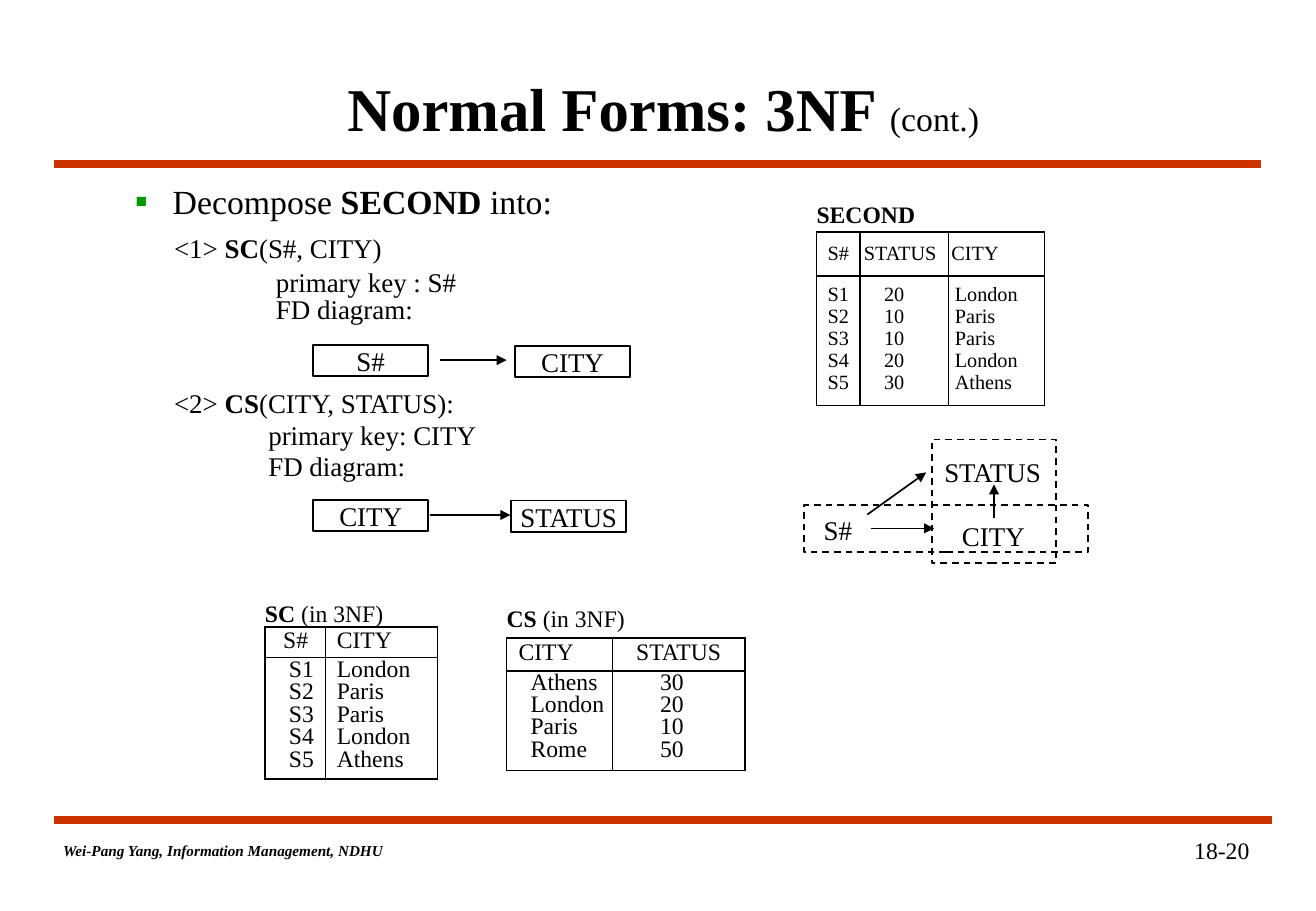
import lxml.etree
import pptx
import pptx.dml.color
import pptx.enum.dml
import pptx.enum.shapes
import pptx.enum.text
import pptx.oxml.ns
import pptx.util

Cm = pptx.util.Cm
Pt = pptx.util.Pt
ANCHOR = pptx.enum.text.MSO_ANCHOR
ALIGN = pptx.enum.text.PP_ALIGN
FONT = "Times New Roman"
BLACK, WHITE, RED, GREEN = "000000", "FFFFFF", "CC3300", "009900"


def color(value):
    return pptx.dml.color.RGBColor.from_string(value)


def add_child(parent, tag, **attributes):
    return lxml.etree.SubElement(parent, pptx.oxml.ns.qn(tag), attributes)


def add_run(paragraph, text, size, bold=False, italic=False):
    run = paragraph.add_run()
    run.text = text
    run.font.name = FONT
    run.font.size = Pt(size)
    run.font.bold = bold
    run.font.italic = italic
    run.font.color.rgb = color(BLACK)


def clear_margins(frame):
    frame.margin_left = frame.margin_right = 0
    frame.margin_top = frame.margin_bottom = 0


def add_text(slide, left, top, width, height, lines):
    """Each line is a list of (text, size, bold) runs; returns the paragraphs."""
    box = slide.shapes.add_textbox(Cm(left), Cm(top), Cm(width), Cm(height))
    frame = box.text_frame
    clear_margins(frame)
    frame.word_wrap = True
    for index, runs in enumerate(lines):
        paragraph = frame.add_paragraph() if index else frame.paragraphs[0]
        for run in runs:
            add_run(paragraph, *run)
    return frame.paragraphs


def add_line(slide, start, end, line_color=BLACK, width=1, arrow=False):
    connector = slide.shapes.add_connector(
        pptx.enum.shapes.MSO_CONNECTOR.STRAIGHT, *(Cm(value) for value in start + end))
    connector.line.color.rgb = color(line_color)
    connector.line.width = Pt(width)
    if arrow:
        add_child(connector.line._get_or_add_ln(), "a:tailEnd", type="triangle")
    add_child(connector._element.spPr, "a:effectLst")


def add_rectangle(slide, left, top, width, height, text="", dashed=False):
    shape = slide.shapes.add_shape(
        pptx.enum.shapes.MSO_SHAPE.RECTANGLE, Cm(left), Cm(top), Cm(width), Cm(height))
    shape.shadow.inherit = False
    shape.line.color.rgb = color(BLACK)
    shape.line.width = Pt(1)
    if dashed:
        shape.fill.background()
        shape.line.dash_style = pptx.enum.dml.MSO_LINE.DASH
    else:
        shape.fill.solid()
        shape.fill.fore_color.rgb = color(WHITE)
    if text:
        frame = shape.text_frame
        clear_margins(frame)
        frame.word_wrap = False
        frame.vertical_anchor = ANCHOR.MIDDLE
        frame.paragraphs[0].alignment = ALIGN.CENTER
        add_run(frame.paragraphs[0], text, 16)


def set_borders(cell, top, bottom):
    properties = cell._tc.get_or_add_tcPr()
    for side, visible in (("L", True), ("R", True), ("T", top), ("B", bottom)):
        line = add_child(properties, "a:ln" + side, w=str(Pt(1)))
        if visible:
            add_child(add_child(line, "a:solidFill"), "a:srgbClr", val=BLACK)
        else:
            add_child(line, "a:noFill")


def relation_table(slide, left, top, caption, caption_gap, size, widths, indents,
                   header_height, pitch, padding, rows):
    """indents: (header, body) per column; padding: above and below the records."""
    add_text(slide, left, top - caption_gap, 5, 0.6, [caption])
    last = len(rows) - 1
    heights = [header_height] + [pitch] * last
    heights[1] += padding[0]
    heights[last] += padding[1]
    frame = slide.shapes.add_table(len(rows), len(widths), Cm(left), Cm(top),
                                   Cm(sum(widths)), Cm(sum(heights)))
    table = frame.table
    table.first_row = table.horz_banding = False
    for column, width in zip(table.columns, widths):
        column.width = Cm(width)
    for r, record in enumerate(rows):
        table.rows[r].height = Cm(heights[r])
        for c, value in enumerate(record):
            cell = table.cell(r, c)
            clear_margins(cell)
            cell.margin_left = Cm(indents[c][r > 0])
            cell.vertical_anchor = (ANCHOR.MIDDLE if r == 0 else
                                    ANCHOR.BOTTOM if r == 1 else ANCHOR.TOP)
            set_borders(cell, r < 2, r in (0, last))
            cell.fill.solid()
            cell.fill.fore_color.rgb = color(WHITE)
            paragraph = cell.text_frame.paragraphs[0]
            paragraph.line_spacing = Pt(int(pitch * 28.35))
            add_run(paragraph, value, size)


def page_frame(slide, left, right):
    # Title
    title = slide.shapes.title
    title.left, title.top, title.width, title.height = Cm(2.51), Cm(1.07), Cm(22.71), Cm(2.34)
    title.text_frame.vertical_anchor = ANCHOR.MIDDLE
    paragraph = title.text_frame.paragraphs[0]
    paragraph.alignment = ALIGN.CENTER
    add_run(paragraph, "Normal Forms: 3NF ", 36, True)
    add_run(paragraph, "(cont.)", 20)
    # Rules and footer
    add_line(slide, (left, 3.43), (right - 0.23, 3.43), RED, 4.5)
    add_line(slide, (left, 17.15), (right, 17.15), RED, 4.5)
    footer = add_text(slide, left + 0.18, 17.6, 9, 0.5, [[]])[0]
    add_run(footer, "Wei-Pang Yang, Information Management, NDHU", 9, True, True)
    number = add_text(slide, right - 4.5, 17.48, 4.02, 0.6, [[("18-20", 14)]])[0]
    number.alignment = ALIGN.RIGHT


def bullet_heading(slide, left, top):
    runs = [("Decompose ", 20), ("SECOND", 20, True), (" into:", 20)]
    paragraph = add_text(slide, left, top, 12, 0.85, [runs])[0]
    paragraph.line_spacing = Pt(24)
    properties = paragraph._p.get_or_add_pPr()
    properties.set("marL", str(Cm(0.79)))
    properties.set("indent", str(-Cm(0.79)))
    add_child(add_child(properties, "a:buClr"), "a:srgbClr", val=GREEN)
    add_child(properties, "a:buSzPct", val="110000")
    add_child(properties, "a:buFont", typeface=FONT)
    add_child(properties, "a:buChar", char="▪")


def decomposition(slide, left, top, number, name, attributes, key, indent, spacings,
                  boxes, second_left, arrow):
    # Relation and key
    lines = [[(number + " ", 16), (name, 16, True), (attributes, 16)],
             [(key, 16)], [("FD diagram:", 16)]]
    paragraphs = add_text(slide, left, top, 9, 2, lines)
    for index, (paragraph, spacing) in enumerate(zip(paragraphs, spacings)):
        paragraph.line_spacing = Pt(spacing)
        if index:
            paragraph._p.get_or_add_pPr().set("marL", str(Cm(indent)))
    # Dependency diagram
    box_top = top + 2.4
    add_rectangle(slide, left + 2.91, box_top, 2.4, 0.66, boxes[0])
    add_rectangle(slide, left + second_left, box_top + 0.02, 2.4, 0.66, boxes[1])
    add_line(slide, (left + arrow[0], box_top + 0.32),
             (left + arrow[1], box_top + 0.32), arrow=True)


def transitive_diagram(slide, left, top):
    add_rectangle(slide, left + 2.67, top, 2.59, 2.59, dashed=True)
    add_rectangle(slide, left, top + 1.37, 5.94, 0.99, dashed=True)
    for text, x, y in (("S#", 0.41, 1.55), ("STATUS", 2.93, 0.33), ("CITY", 3.3, 1.68)):
        add_text(slide, left + x, top + y, 2.3, 0.65, [[(text, 16)]])
    for x1, y1, x2, y2 in ((1.32, 1.57, 2.55, 0.69), (3.97, 1.65, 3.97, 0.94),
                           (1.4, 1.86, 2.72, 1.86)):
        add_line(slide, (left + x1, top + y1), (left + x2, top + y2), arrow=True)


def main():
    presentation = pptx.Presentation()
    presentation.slide_width, presentation.slide_height = Cm(27.51), Cm(19.05)
    slide = presentation.slides.add_slide(presentation.slide_layouts[5])
    page_frame(slide, 1.14, 26.6)
    bullet_heading(slide, 2.82, 3.78)
    decomposition(slide, 3.64, 4.81, "<1>", "SC", "(S#, CITY)", "primary key : S#", 2.13,
                  (20, 20, 16.5), ("S#", "CITY"), 7.13, (5.55, 6.95))
    decomposition(slide, 3.64, 8.05, "<2>", "CS", "(CITY, STATUS):", "primary key: CITY", 1.97,
                  (20, 19, 18.5), ("CITY", "STATUS"), 7.05, (5.35, 7.03))
    # Relations
    suppliers = [("S1", "20", "London"), ("S2", "10", "Paris"), ("S3", "10", "Paris"),
                 ("S4", "20", "London"), ("S5", "30", "Athens")]
    relation_table(slide, 17.07, 4.85, [("SECOND", 14, True)], 0.67, 12,
                   (0.91, 1.85, 2.01), ((0.23, 0.23), (0.08, 0.5), (0.06, 0.13)),
                   0.92, 0.46, (0.16, 0.25), [("S#", "STATUS", "CITY")] + suppliers)
    relation_table(slide, 5.54, 13.11, [("SC", 14, True), (" (in 3NF)", 14)], 0.59, 14,
                   (1.27, 2.33), ((0.38, 0.5), (0.23, 0.23)), 0.64, 0.47, (0.06, 0.13),
                   [("S#", "CITY")] + [(s, city) for s, _, city in suppliers])
    relation_table(slide, 10.59, 13.34, [("CS ", 14, True), ("(in 3NF)", 14)], 0.71, 14,
                   (2.21, 2.77), ((0.25, 0.5), (0.5, 1)), 0.69, 0.47, (0.04, 0.16),
                   [("CITY", "STATUS"), ("Athens", "30"), ("London", "20"),
                    ("Paris", "10"), ("Rome", "50")])
    transitive_diagram(slide, 16.81, 9.19)
    presentation.save("out.pptx")


if __name__ == "__main__":
    main()
